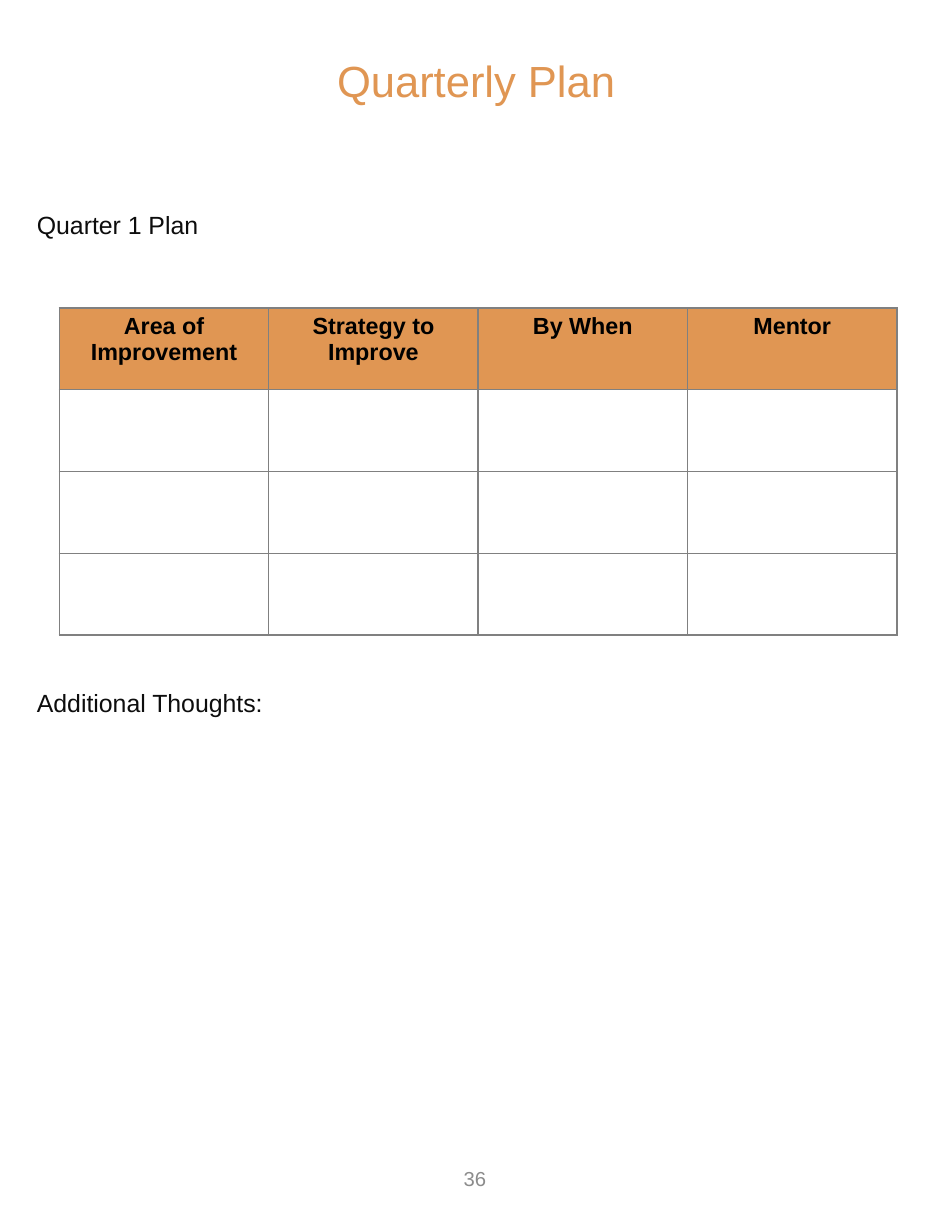
from dataclasses import dataclass

from lxml.etree import SubElement
from pptx import Presentation
from pptx.dml.color import RGBColor
from pptx.enum.text import MSO_ANCHOR, PP_ALIGN
from pptx.oxml.ns import qn
from pptx.util import Inches, Pt


@dataclass(frozen=True)
class Theme:
    font: str = "Arial"
    accent: str = "E09653"
    body: str = "0D0D0D"
    header: str = "000000"
    muted: str = "8C8C8C"
    border: str = "808080"
    title_size: int = 28
    body_size: int = 16
    header_size: int = 15
    number_size: int = 13


THEME = Theme()
HEADERS = ["Area of Improvement", "Strategy to Improve", "By When", "Mentor"]
BLANK_ROWS = 3
COLUMN_WIDTH = 1.87
ROW_HEIGHT = 0.73
INSET = Inches(0.05)


def set_insets(target):
    target.margin_left = target.margin_right = INSET
    target.margin_top = target.margin_bottom = INSET


def write(tf, text, size, color, align=PP_ALIGN.LEFT, bold=False):
    p = tf.paragraphs[0]
    p.text = text
    p.alignment = align
    for r in p.runs:
        r.font.name = THEME.font
        r.font.size = Pt(size)
        r.font.bold = bold
        r.font.color.rgb = RGBColor.from_string(color)
    return p


def add_text(s, box, text, size, color, align=PP_ALIGN.LEFT, anchor=MSO_ANCHOR.TOP):
    tf = s.shapes.add_textbox(*map(Inches, box)).text_frame
    tf.word_wrap = True
    tf.vertical_anchor = anchor
    set_insets(tf)
    return write(tf, text, size, color, align)


def set_borders(cell):
    """Draw a thin line on all four sides; call before filling the cell."""
    tc_pr = cell._tc.get_or_add_tcPr()
    for side in ("lnL", "lnR", "lnT", "lnB"):
        line = SubElement(tc_pr, qn(f"a:{side}"), w=str(Pt(1)))
        fill = SubElement(line, qn("a:solidFill"))
        SubElement(fill, qn("a:srgbClr"), val=THEME.border)


def add_plan_table(s, left, top):
    rows, cols = BLANK_ROWS + 1, len(HEADERS)
    table = s.shapes.add_table(
        rows, cols, Inches(left), Inches(top),
        Inches(cols * COLUMN_WIDTH), Inches(rows * ROW_HEIGHT),
    ).table
    table.horz_banding = False
    for column in table.columns:
        column.width = Inches(COLUMN_WIDTH)
    for row in table.rows:
        row.height = Inches(ROW_HEIGHT)
    for cell in table.iter_cells():
        set_insets(cell)
        set_borders(cell)
        cell.fill.background()
    for cell, header in zip(table.rows[0].cells, HEADERS):
        cell.fill.solid()
        cell.fill.fore_color.rgb = RGBColor.from_string(THEME.accent)
        write(cell.text_frame, header, THEME.header_size, THEME.header,
              PP_ALIGN.CENTER, bold=True)


def main():
    prs = Presentation()
    prs.slide_width, prs.slide_height = Inches(8.5), Inches(11)
    s = prs.slides.add_slide(prs.slide_layouts[6])

    title = add_text(s, (0.44, 0.48, 7.62, 0.53), "Quarterly Plan",
                     THEME.title_size, THEME.accent,
                     PP_ALIGN.CENTER, MSO_ANCHOR.MIDDLE)
    title.line_spacing = 0.9
    for top, label in ((1.82, "Quarter 1 Plan"), (6.09, "Additional Thoughts:")):
        add_text(s, (0.28, top, 7.96, 0.35), label, THEME.body_size, THEME.body)
    add_plan_table(s, 0.53, 2.75)
    add_text(s, (3.25, 10.23, 1.98, 0.59), "36", THEME.number_size, THEME.muted,
             PP_ALIGN.CENTER, MSO_ANCHOR.MIDDLE)

    prs.save("out.pptx")


if __name__ == "__main__":
    main()
